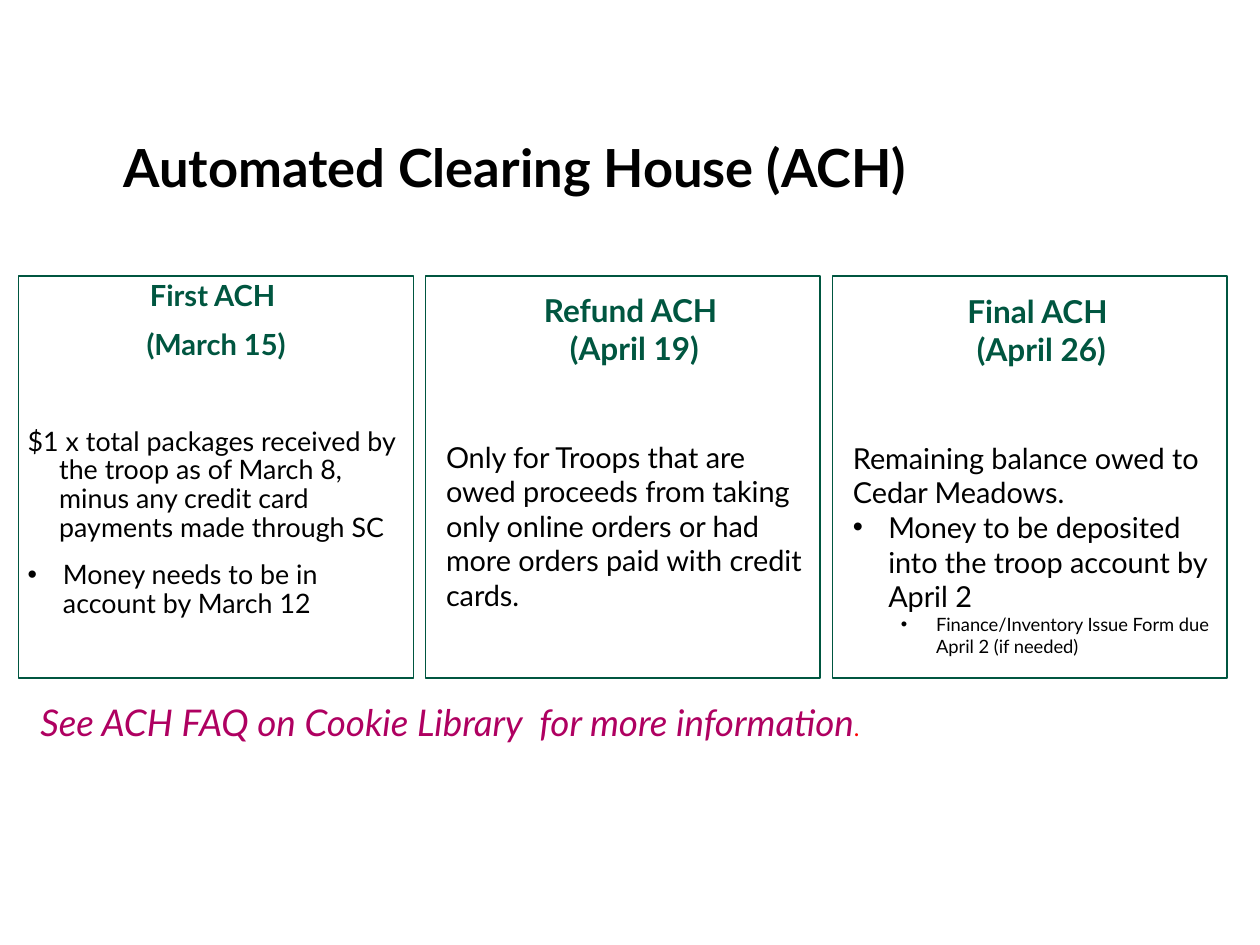
from dataclasses import dataclass

from lxml import etree
from pptx import Presentation
from pptx.dml.color import RGBColor
from pptx.enum.shapes import MSO_SHAPE as Shape
from pptx.enum.text import MSO_ANCHOR as Anchor, PP_ALIGN as Align
from pptx.oxml.ns import qn
from pptx.util import Inches, Pt

BLACK = RGBColor(0x00, 0x00, 0x00)
GREEN = RGBColor(0x00, 0x56, 0x40)
MAGENTA = RGBColor(0xAF, 0x00, 0x61)
RED = RGBColor(0xFF, 0x00, 0x00)
FONT = "Lato"

BOX_LEFT, BOX_TOP, BOX_STEP = 0.15, 2.19, 3.23
BOX_W, BOX_H = 3.13, 3.19
# Column text stays inside the outline; headings shift right to stay centred
TEXT_W, HEAD_SHIFT = 3.0, 0.13


@dataclass
class Run:
    text: str
    size: float
    color: RGBColor = BLACK
    bold: bool = False
    italic: bool = False


@dataclass
class Para:
    runs: list[Run]
    align: Align = Align.LEFT
    before: float = 0
    spacing: float = 1.0
    margin: float = 0
    hanging: float = 0
    bullet: bool = False
    level: int = 0


def heading(text: str, size: float, **layout) -> Para:
    return Para([Run(text, size, GREEN, bold=True)], Align.CENTER, **layout)


def body(text: str, size: float, **layout) -> Para:
    return Para([Run(text, size)], **layout)


def write(shape, paras: list[Para], inset_x: float = 0.07, inset_y: float = 0.04) -> None:
    tf = shape.text_frame
    frame = {"word_wrap": True, "vertical_anchor": Anchor.TOP,
             "margin_left": Inches(inset_x), "margin_right": Inches(inset_x),
             "margin_top": Inches(inset_y), "margin_bottom": Inches(inset_y)}
    for name, value in frame.items():
        setattr(tf, name, value)
    for i, para in enumerate(paras):
        p = tf.add_paragraph() if i else tf.paragraphs[0]
        pPr = p._p.get_or_add_pPr()
        pPr.set("marL", str(Inches(para.margin)))
        pPr.set("indent", str(-Inches(para.hanging)))
        if para.bullet:
            etree.SubElement(pPr, qn("a:buFont")).set("typeface", "Arial")
            etree.SubElement(pPr, qn("a:buChar")).set("char", "•")
        p.alignment, p.level = para.align, para.level
        p.line_spacing, p.space_before = para.spacing, Pt(para.before)
        for run in para.runs:
            r = p.add_run()
            r.text = run.text
            fmt = {"name": FONT, "size": Pt(run.size),
                   "bold": run.bold, "italic": run.italic}
            for name, value in fmt.items():
                setattr(r.font, name, value)
            r.font.color.rgb = run.color


def add_text(s, left: float, top: float, width: float, height: float,
             paras: list[Para], **insets) -> None:
    sp = s.shapes.add_textbox(Inches(left), Inches(top), Inches(width), Inches(height))
    write(sp, paras, **insets)


def add_box(s, column: int):
    sp = s.shapes.add_shape(Shape.RECTANGLE, Inches(BOX_LEFT + column * BOX_STEP),
                            Inches(BOX_TOP), Inches(BOX_W), Inches(BOX_H))
    sp.shadow.inherit = False
    sp.fill.background()
    sp.line.color.rgb = GREEN
    sp.line.width = Pt(0.75)
    return sp


def main() -> None:
    prs = Presentation()
    prs.slide_width, prs.slide_height = Inches(10), Inches(7.5)
    s = prs.slides.add_slide(prs.slide_layouts[6])

    # Title
    add_text(s, 0.88, 0.94, 7.28, 1.09,
             [Para([Run("Automated Clearing House (ACH)", 30, bold=True)], spacing=0.9)],
             inset_x=0.1, inset_y=0.19)

    # Outlined columns
    boxes = [add_box(s, column) for column in range(3)]

    # First ACH, written inside its box
    hang = {"spacing": 0.9, "margin": 0.25, "hanging": 0.25}
    write(boxes[0], [
        heading("First ACH ", 16.6, **hang),
        heading("(March 15)", 16.6, before=10, **hang),
        body("$1 x total packages received by the troop as of March 8, "
             "minus any credit card payments made through SC", 15.3, before=38, **hang),
        body("Money needs to be in account by March 12", 15.3, before=10,
             spacing=0.9, margin=0.28, hanging=0.28, bullet=True),
    ])

    # Refund ACH
    add_text(s, 3.47, 2.27, TEXT_W, 2.95, [
        heading("Refund ACH ", 18, margin=HEAD_SHIFT),
        heading("(April 19)", 18, margin=HEAD_SHIFT),
        body("Only for Troops that are owed proceeds from taking only online orders "
             "or had more orders paid with credit cards.", 16.5, before=41.4),
    ])

    # Final ACH
    add_text(s, 6.7, 2.28, TEXT_W, 3, [
        heading("Final ACH ", 18, margin=HEAD_SHIFT),
        heading("(April 26)", 18, margin=HEAD_SHIFT),
        body("Remaining balance owed to Cedar Meadows.", 16.5, before=41.4),
        body("Money to be deposited into the troop account by April 2", 16.5,
             margin=0.28, hanging=0.28, bullet=True),
        body("Finance/Inventory Issue Form due April 2 (if needed)", 10.5,
             margin=0.66, hanging=0.28, bullet=True, level=1),
    ])

    # Closing note
    add_text(s, 0.25, 5.51, 8.66, 0.43, [Para([
        Run("See ACH FAQ on Cookie Library  for more information", 21, MAGENTA, italic=True),
        Run(".", 13.5, RED),
    ])])

    prs.save("out.pptx")


if __name__ == "__main__":
    main()
